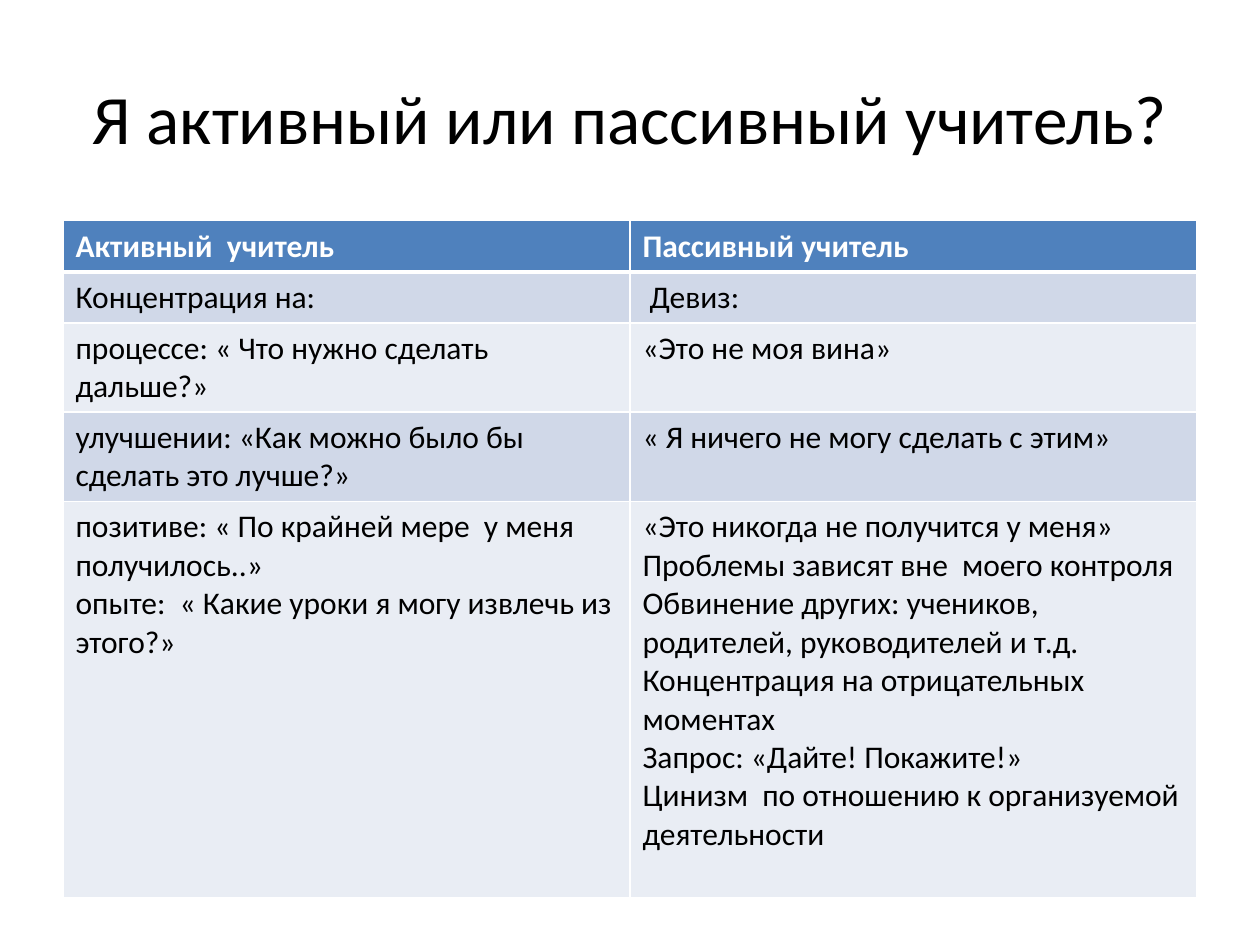
import pptx
import pptx.dml.color
import pptx.enum.text
import pptx.oxml
import pptx.oxml.ns
import pptx.util

Cm = pptx.util.Cm
FONT = "Calibri"
BLACK, WHITE = "000000", "FFFFFF"
HEADER_FILL = "4F81BD"
BAND_FILLS = ["E9EDF4", "D0D8E8"]

TEACHER_ROWS = [
    (["Активный  учитель"], ["Пассивный учитель"]),
    (["Концентрация на:"], [" Девиз:"]),
    (["процессе: « Что нужно сделать дальше?»"], ["«Это не моя вина»"]),
    (
        ["улучшении: «Как можно было бы сделать это лучше?»"],
        ["« Я ничего не могу сделать с этим»"],
    ),
    (
        [
            "позитиве: « По крайней мере  у меня получилось..»",
            "опыте:  « Какие уроки я могу извлечь из этого?»",
        ],
        [
            "«Это никогда не получится у меня»",
            "Проблемы зависят вне  моего контроля",
            "Обвинение других: учеников, родителей, руководителей и т.д.",
            "Концентрация на отрицательных моментах",
            "Запрос: «Дайте! Покажите!»",
            "Цинизм  по отношению к организуемой деятельности",
        ],
    ),
]
ROW_HEIGHTS = [1.03, 1.03, 1.8, 1.8, 7.98]


def color(value):
    return pptx.dml.color.RGBColor.from_string(value)


def write(frame, lines, size, text_color, bold=False, align=None):
    for index, line in enumerate(lines):
        paragraph = frame.add_paragraph() if index else frame.paragraphs[0]
        paragraph.alignment = align
        run = paragraph.add_run()
        run.text = line
        run.font.name = FONT
        run.font.size = pptx.util.Pt(size)
        run.font.bold = bold
        run.font.color.rgb = color(text_color)


def set_borders(cell, bottom_width):
    properties = cell._tc.get_or_add_tcPr()
    for side, width in (("L", 1), ("R", 1), ("T", 1), ("B", bottom_width)):
        properties.append(pptx.oxml.parse_xml(
            f'<a:ln{side} {pptx.oxml.ns.nsdecls("a")} w="{pptx.util.Pt(width)}">'
            f'<a:solidFill><a:srgbClr val="{WHITE}"/></a:solidFill></a:ln{side}>'
        ))


def add_title(slide, left, top, width, height):
    title = slide.shapes.add_textbox(Cm(left), Cm(top), Cm(width), Cm(height))
    frame = title.text_frame
    frame.word_wrap = True
    frame.vertical_anchor = pptx.enum.text.MSO_ANCHOR.MIDDLE
    write(frame, ["Я активный или пассивный учитель?"], 39.6, BLACK,
          align=pptx.enum.text.PP_ALIGN.CENTER)


def add_teacher_table(slide, left, top, width, height):
    table = slide.shapes.add_table(
        len(TEACHER_ROWS), 2, Cm(left), Cm(top), Cm(width), Cm(height)
    ).table
    for row, (teachers, row_height) in enumerate(zip(TEACHER_ROWS, ROW_HEIGHTS)):
        table.rows[row].height = Cm(row_height)
        is_header = row == 0
        for column, lines in enumerate(teachers):
            cell = table.cell(row, column)
            set_borders(cell, 3 if is_header else 1)
            cell.fill.solid()
            cell.fill.fore_color.rgb = color(HEADER_FILL if is_header else BAND_FILLS[row % 2])
            write(cell.text_frame, lines, 18, WHITE if is_header else BLACK, is_header)


def main():
    presentation = pptx.Presentation()
    presentation.slide_width = Cm(25.4)
    presentation.slide_height = Cm(19.05)
    slide = presentation.slides.add_slide(presentation.slide_layouts[6])
    add_title(slide, 1.27, 0.76, 22.86, 3.18)
    add_teacher_table(slide, 1.27, 4.45, 22.86, sum(ROW_HEIGHTS))
    presentation.save("out.pptx")


if __name__ == "__main__":
    main()
